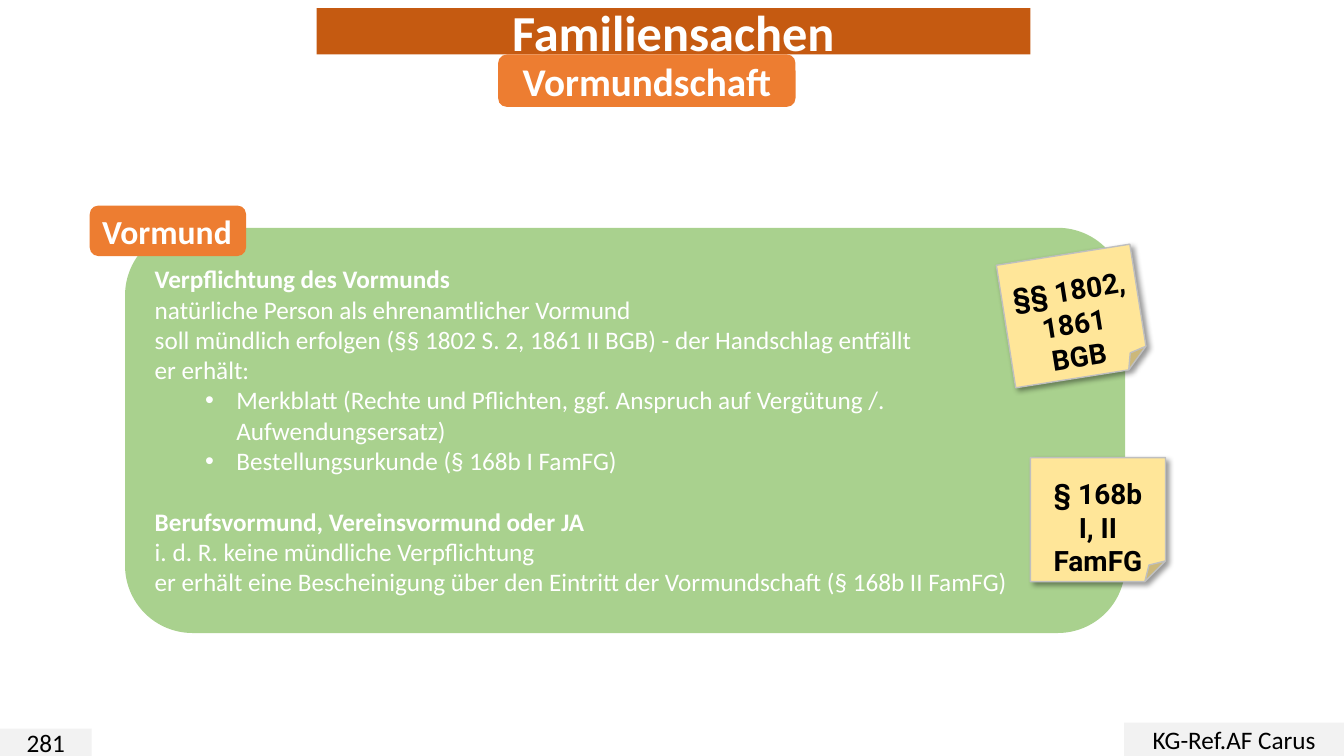
from dataclasses import dataclass

from lxml import etree
from pptx import Presentation
from pptx.dml.color import RGBColor
from pptx.enum.shapes import MSO_SHAPE
from pptx.enum.text import MSO_ANCHOR, MSO_AUTO_SIZE, PP_ALIGN
from pptx.oxml import parse_xml
from pptx.oxml.ns import nsdecls, qn
from pptx.util import Inches, Pt

ROUNDED = MSO_SHAPE.ROUNDED_RECTANGLE
RECTANGLE = MSO_SHAPE.RECTANGLE
FOLDED = MSO_SHAPE.FOLDED_CORNER
LEFT, CENTER = PP_ALIGN.LEFT, PP_ALIGN.CENTER
MIDDLE = MSO_ANCHOR.MIDDLE

COLOURS = {
    "title": "C55A11",
    "label": "ED7D31",
    "panel": "A9D18E",
    "footer": "F2F2F2",
    "note": "FFE699",
    "note_edge": "BFBFBF",
    "white": "FFFFFF",
    "black": "000000",
}


@dataclass(frozen=True)
class Line:
    text: str
    bold: bool = False
    bullet: bool = False
    space_before: float = 0


@dataclass(frozen=True)
class Box:
    left: float
    top: float
    width: float
    height: float
    fill: str
    lines: tuple[Line, ...]
    size: float = 18
    colour: str = "white"
    font: str = "Calibri"
    align: PP_ALIGN = CENTER
    preset: MSO_SHAPE = ROUNDED
    rotation: float = 0


def heading(text: str) -> tuple[Line, ...]:
    return (Line(text, bold=True),)


def note(left: float, top: float, words: tuple[str, ...], rotation: float = 0) -> Box:
    lines = tuple(Line(word, bold=True) for word in words)
    return Box(left, top, 1.34, 1.23, "note", lines, 20, "black", "Roboto",
               preset=FOLDED, rotation=rotation)


TITLE = Box(3.14, 0.08, 7.08, 0.46, "title", heading("Familiensachen"), 36)

DUTIES = (
    Line("Verpflichtung des Vormunds", bold=True),
    Line("natürliche Person als ehrenamtlicher Vormund"),
    Line("soll mündlich erfolgen (§§ 1802 S. 2, 1861 II BGB) - der Handschlag entfällt"),
    Line("er erhält:"),
    Line("Merkblatt (Rechte und Pflichten, ggf. Anspruch auf Vergütung /. "
         "Aufwendungsersatz)", bullet=True),
    Line("Bestellungsurkunde (§ 168b I FamFG)", bullet=True),
    Line("Berufsvormund, Vereinsvormund oder JA", bold=True, space_before=22),
    Line("i. d. R. keine mündliche Verpflichtung"),
    Line("er erhält eine Bescheinigung über den Eintritt der Vormundschaft (§ 168b II FamFG)"),
)

BOXES = (
    Box(0, 7.23, 0.91, 0.27, "footer", (Line("281"),), colour="black", preset=RECTANGLE),
    Box(11.15, 7.17, 2.18, 0.33, "footer", (Line("KG-Ref.AF Carus"),), colour="black",
        preset=RECTANGLE),
    Box(1.24, 2.26, 9.92, 4.02, "panel", DUTIES, align=LEFT),
    Box(4.94, 0.54, 2.95, 0.52, "label", heading("Vormundschaft"), 28),
    Box(0.89, 2.04, 1.55, 0.5, "label", heading("Vormund"), 24, align=LEFT),
)

NOTES = (
    note(10.22, 4.54, ("§ 168b", "I, II", "FamFG")),
    note(9.97, 2.52, ("§§ 1802,", "1861", "BGB"), rotation=351),
)


def rgb(name: str) -> RGBColor:
    return RGBColor.from_string(COLOURS[name])


def add_bullet(para) -> None:
    props = para._p.get_or_add_pPr()
    props.set("marL", str(Inches(0.81)))
    props.set("indent", str(Inches(-0.31)))
    etree.SubElement(props, qn("a:buFont")).set("typeface", "Arial")
    etree.SubElement(props, qn("a:buChar")).set("char", "•")


def write_lines(shape, box: Box) -> None:
    frame = shape.text_frame
    frame.word_wrap = True
    frame.auto_size = MSO_AUTO_SIZE.NONE
    frame.vertical_anchor = MIDDLE
    frame.text = "\n".join(line.text for line in box.lines)
    for para, line in zip(frame.paragraphs, box.lines):
        para.alignment = box.align
        para.space_before = Pt(line.space_before)
        if line.bullet:
            add_bullet(para)
        for span in para.runs:
            span.font.name = box.font
            span.font.size = Pt(box.size)
            span.font.bold = line.bold
            span.font.color.rgb = rgb(box.colour)


def paint(shape, box: Box) -> None:
    shape.fill.solid()
    shape.fill.fore_color.rgb = rgb(box.fill)
    shape.line.fill.background()
    write_lines(shape, box)


def add_box(page, box: Box):
    place = map(Inches, (box.left, box.top, box.width, box.height))
    shape = page.shapes.add_shape(box.preset, *place)
    shape.shadow.inherit = False
    shape.rotation = box.rotation
    paint(shape, box)
    return shape


def add_note(page, box: Box) -> None:
    """Add a sticky note with an edge, a soft shadow and lowered text."""
    shape = add_box(page, box)
    shape.line.color.rgb = rgb("note_edge")
    shape.line.width = Pt(1)
    frame = shape.text_frame
    frame.margin_top, frame.margin_bottom = Inches(0.35), 0
    frame.margin_left = frame.margin_right = Inches(0.05)
    effects = shape._element.spPr.find(qn("a:effectLst"))
    effects.append(parse_xml(
        f'<a:outerShdw {nsdecls("a")} blurRad="{Pt(4)}" dist="{Pt(3)}" '
        f'dir="{45 * 60000}" algn="tl" rotWithShape="0">'
        f'<a:srgbClr val="{COLOURS["black"]}"><a:alpha val="40000"/></a:srgbClr>'
        '</a:outerShdw>'))


def format_title(page, box: Box) -> None:
    """Turn the title placeholder into a filled rounded bar."""
    title = page.shapes.title
    title.left, title.top = Inches(box.left), Inches(box.top)
    title.width, title.height = Inches(box.width), Inches(box.height)
    title._element.spPr.append(parse_xml(
        f'<a:prstGeom {nsdecls("a")} prst="roundRect"><a:avLst/></a:prstGeom>'))
    paint(title, box)


def main() -> None:
    deck = Presentation()
    deck.slide_width, deck.slide_height = Inches(13.33), Inches(7.5)
    page = deck.slides.add_slide(deck.slide_layouts.get_by_name("Title Only"))
    format_title(page, TITLE)
    for box in BOXES:
        add_box(page, box)
    for box in NOTES:
        add_note(page, box)
    deck.save("out.pptx")


if __name__ == "__main__":
    main()
